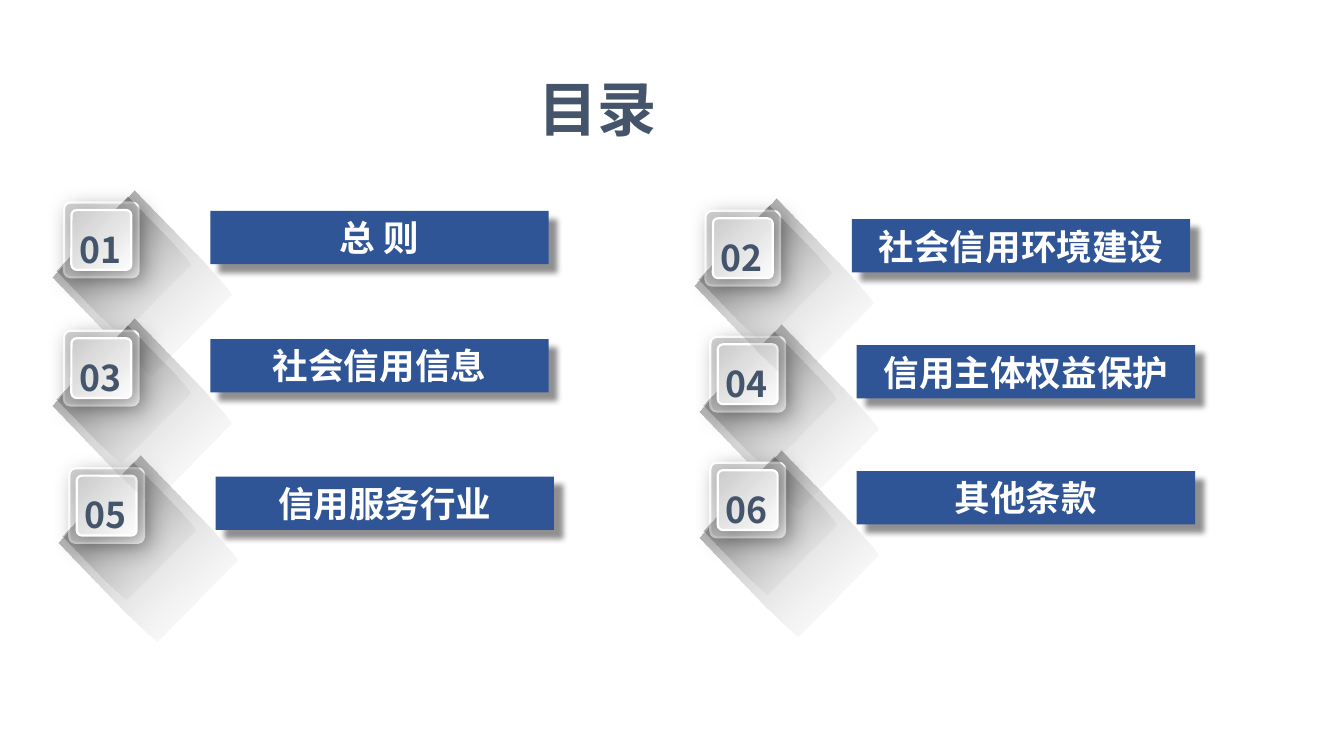
from lxml.etree import SubElement
from pptx import Presentation
from pptx.dml.color import RGBColor
from pptx.enum.shapes import MSO_SHAPE
from pptx.enum.text import MSO_ANCHOR, MSO_AUTO_SIZE, PP_ALIGN
from pptx.oxml.ns import qn
from pptx.util import Pt

# Number, label, left and top of the badge, from back to front
ENTRIES = [
    ("04", "信用主体权益保护", 479.5, 227.5),
    ("01", "总 则", 43.2, 136.8),
    ("05", "信用服务行业", 46.8, 316.2),
    ("03", "社会信用信息", 43.2, 223.4),
    ("02", "社会信用环境建设", 476.2, 142.4),
    ("06", "其他条款", 479.5, 312.5),
]

# Outline of a cast shade, as fractions of its width and height
SHADE_OUTLINE = [(0, 0), (0.69, 0), (0.91, 0.01), (0.98, 0.02),
                 (1, 0.98), (0.9, 0.99), (0.69, 1), (0.04, 1)]

# Gradient stops: position, colour, opacity in percent
SHADE_STOPS = [(0, "000000", 50), (100, "EBEBEB", 0)]
TILE_STOPS = [(1, "CCCCCC", 100), (100, "FCFCFC", 100)]
RIM_STOPS = [(0, "BFBFBF", 100), (50, "FFFFFF", 100), (100, "FFFFFF", 100)]


def color(value):
    return RGBColor.from_string(value)


def add_color(parent, value, opacity):
    node = SubElement(parent, qn("a:srgbClr"), val=value)
    SubElement(node, qn("a:alpha"), val=str(opacity * 1000))


def set_gradient(fill, parent, stops, angle):
    """Give a fill, held by the XML element parent, a linear gradient."""
    fill.background()
    gradient = parent.makeelement(qn("a:gradFill"), {"rotWithShape": "1"})
    stop_list = SubElement(gradient, qn("a:gsLst"))
    for position, value, opacity in stops:
        stop = SubElement(stop_list, qn("a:gs"), pos=str(position * 1000))
        add_color(stop, value, opacity)
    SubElement(gradient, qn("a:lin"), ang=str(angle * 60000), scaled="0")
    parent.replace(parent.find(qn("a:noFill")), gradient)


def set_shadow(shape, opacity, blur, distance):
    shape.shadow.inherit = False
    effects = shape._element.spPr.find(qn("a:effectLst"))
    shadow = SubElement(effects, qn("a:outerShdw"), blurRad=str(Pt(blur)),
                        dist=str(Pt(distance)), dir=str(45 * 60000),
                        algn="tl", rotWithShape="0")
    add_color(shadow, "000000", opacity)


class ContentsPage:
    font = "Noto Sans CJK SC"
    dark = "44546A"
    blue = "2F5597"
    white = "FFFFFF"

    def __init__(self, deck):
        self.page = deck.slides.add_slide(deck.slide_layouts[5])

    def set_text(self, shape, text, size, ink, align, top_inset=0):
        frame = shape.text_frame
        frame.word_wrap = True
        frame.auto_size = MSO_AUTO_SIZE.NONE
        frame.vertical_anchor = MSO_ANCHOR.MIDDLE
        frame.margin_top, frame.margin_bottom = Pt(top_inset), 0
        para = frame.paragraphs[0]
        para.text = text
        para.alignment = align
        para.font.size = Pt(size)
        para.font.bold = True
        para.font.name = self.font
        para.font.color.rgb = color(ink)
        defaults = para._p.pPr.find(qn("a:defRPr"))
        SubElement(defaults, qn("a:ea"), typeface=self.font)

    def title(self, text, left, top, width, height):
        box = self.page.shapes.title
        box.left, box.top = Pt(left), Pt(top)
        box.width, box.height = Pt(width), Pt(height)
        self.set_text(box, text, 40, self.dark, PP_ALIGN.JUSTIFY)

    def shade(self, group, left, top, width, height):
        points = [(Pt(left + x * width), Pt(top + y * height))
                  for x, y in SHADE_OUTLINE]
        builder = group.shapes.build_freeform(*points[0])
        builder.add_line_segments(points[1:], close=True)
        shape = builder.convert_to_shape()
        shape.rotation = 46
        shape.line.fill.background()
        shape.shadow.inherit = False
        set_gradient(shape.fill, shape._element.spPr, SHADE_STOPS, 0)

    def tile(self, group, left, top, side, blur, distance):
        shape = group.shapes.add_shape(MSO_SHAPE.ROUNDED_RECTANGLE,
                                       Pt(left), Pt(top), Pt(side), Pt(side))
        shape.adjustments[0] = 0.087
        shape.line.width = Pt(1.5)
        properties = shape._element.spPr
        set_gradient(shape.line.fill, properties.find(qn("a:ln")),
                     RIM_STOPS, 45)
        set_gradient(shape.fill, properties, TILE_STOPS, 45)
        set_shadow(shape, 30, blur, distance)

    def number(self, group, text, left, top):
        box = group.shapes.add_textbox(Pt(left), Pt(top), Pt(49), Pt(51))
        self.set_text(box, text, 24, self.dark, PP_ALIGN.CENTER, 11.5)

    def bar(self, group, text, left, top):
        shape = group.shapes.add_shape(MSO_SHAPE.RECTANGLE, Pt(left), Pt(top),
                                       Pt(228.4), Pt(36))
        shape.fill.solid()
        shape.fill.fore_color.rgb = color(self.blue)
        shape.line.fill.background()
        set_shadow(shape, 43, 4, 8)
        self.set_text(shape, text, 24, self.white, PP_ALIGN.CENTER)

    def entry(self, number, label, left, top):
        group = self.page.shapes.add_group_shape()
        group.name = f"Entry {number}"
        self.shade(group, left + 3.8, top + 14.6, 98, 80.6)
        self.tile(group, left, top, 50.4, 15, 5)
        self.shade(group, left + 8.6, top + 8.4, 63.4, 69.1)
        self.tile(group, left + 5, top + 5, 40.4, 11, 3)
        self.number(group, number, left, top)
        self.bar(group, label, left + 98.8, top + 5.6)


def main():
    deck = Presentation()
    deck.slide_width, deck.slide_height = Pt(907.2), Pt(510.5)
    contents = ContentsPage(deck)

    # Heading
    contents.title("目录", 356.4, 39.6, 181.4, 66.2)

    # Numbered entries
    for number, label, left, top in ENTRIES:
        contents.entry(number, label, left, top)

    deck.save("out.pptx")


if __name__ == "__main__":
    main()
